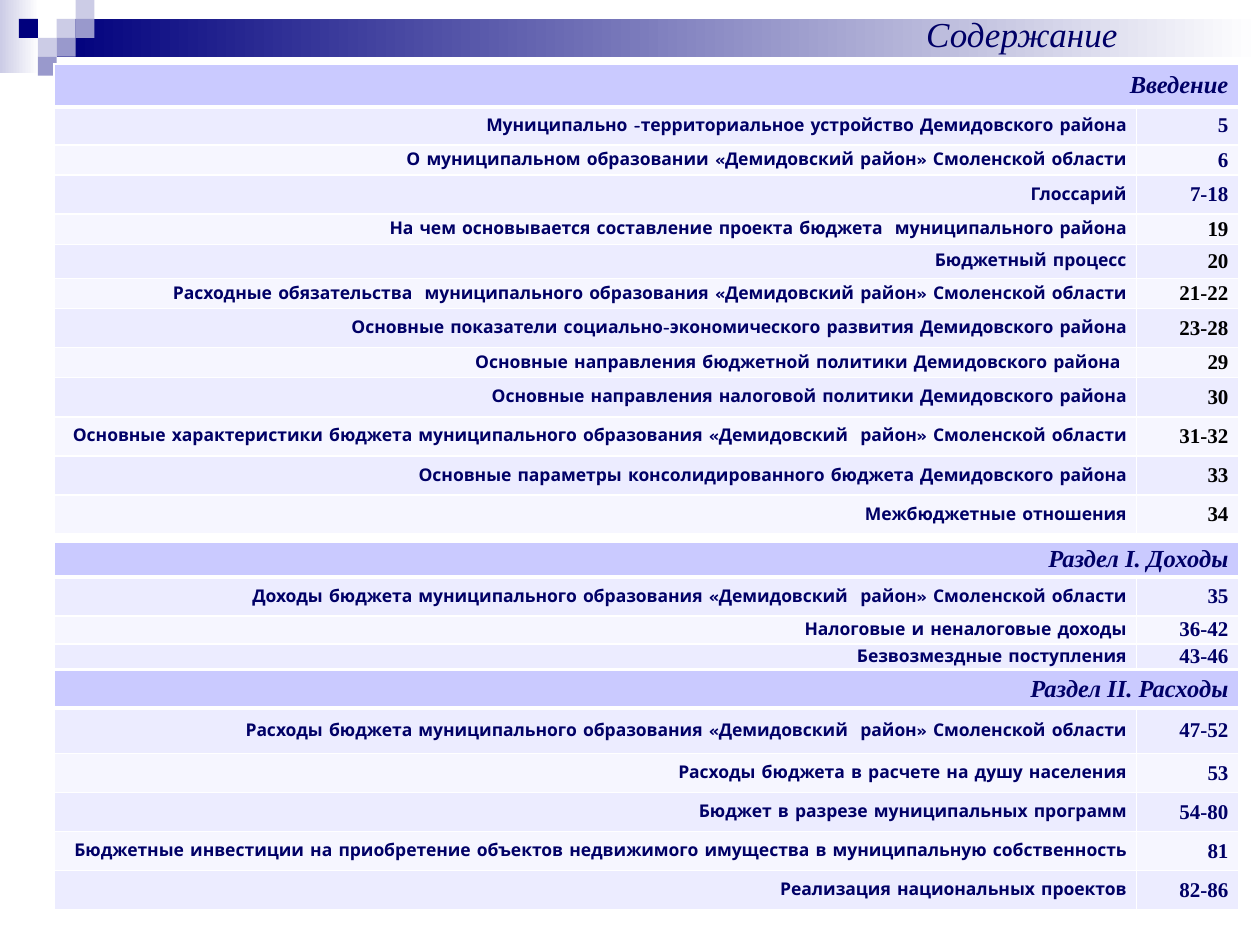
from dataclasses import dataclass

from lxml import etree
from pptx import Presentation
from pptx.dml.color import RGBColor
from pptx.enum.shapes import MSO_SHAPE
from pptx.enum.text import MSO_ANCHOR, PP_ALIGN
from pptx.oxml.ns import qn
from pptx.util import Pt

RECTANGLE = MSO_SHAPE.RECTANGLE
MIDDLE = MSO_ANCHOR.MIDDLE
CENTER, RIGHT = PP_ALIGN.CENTER, PP_ALIGN.RIGHT
PX = 9144  # 100 px to the inch


@dataclass(frozen=True)
class Theme:
    white: str = "FFFFFF"
    black: str = "000000"
    ink: str = "000066"
    dark: str = "00007D"
    medium: str = "9999CC"
    light: str = "CCCCE6"
    heading_fill: str = "CACAFF"
    bands: tuple = ("ECECFF", "F6F6FF")
    serif: str = "Times New Roman"
    rounded: str = "Comic Neue"
    title_size: int = 20
    heading_size: int = 14
    page_size: int = 12
    topic_size: int = 10


THEME = Theme()

# Each row: topic, pages, height in px
INTRODUCTION = [
    ("Муниципально -территориальное устройство Демидовского района", "5", 30),
    ("О муниципальном образовании «Демидовский район» Смоленской области", "6", 24),
    ("Глоссарий", "7-18", 31),
    ("На чем основывается составление проекта бюджета  муниципального района", "19", 24),
    ("Бюджетный процесс", "20", 27),
    ("Расходные обязательства  муниципального образования «Демидовский район» Смоленской области", "21-22", 24),
    ("Основные показатели социально-экономического развития Демидовского района", "23-28", 31),
    ("Основные направления бюджетной политики Демидовского района ", "29", 24),
    ("Основные направления налоговой политики Демидовского района", "30", 31),
    ("Основные характеристики бюджета муниципального образования «Демидовский  район» Смоленской области", "31-32", 31),
    ("Основные параметры консолидированного бюджета Демидовского района", "33", 31),
    ("Межбюджетные отношения", "34", 31),
]
INCOME = [
    ("Доходы бюджета муниципального образования «Демидовский  район» Смоленской области", "35", 31),
    ("Налоговые и неналоговые доходы", "36-42", 22),
    ("Безвозмездные поступления", "43-46", 19),
]
EXPENSES = [
    ("Расходы бюджета муниципального образования «Демидовский  район» Смоленской области", "47-52", 36),
    ("Расходы бюджета в расчете на душу населения", "53", 31),
    ("Бюджет в разрезе муниципальных программ", "54-80", 31),
    ("Бюджетные инвестиции на приобретение объектов недвижимого имущества в муниципальную собственность", "81", 31),
    ("Реализация национальных проектов", "82-86", 31),
]


def box_emu(*lengths):
    return [length * PX for length in lengths]


def style_paragraph(paragraph, alignment, font_name, size, color, bold=False, italic=False):
    paragraph.alignment = alignment
    font = paragraph.font
    font.name, font.size = font_name, Pt(size)
    font.bold, font.italic = bold, italic
    font.color.rgb = RGBColor.from_string(color)


def add_rectangle(slide, box, *colors):
    """One colour gives a solid fill, two a gradient from left to right."""
    shape = slide.shapes.add_shape(RECTANGLE, *box_emu(*box))
    shape.shadow.inherit = False
    shape.line.fill.background()
    if len(colors) == 1:
        shape.fill.solid()
        shape.fill.fore_color.rgb = RGBColor.from_string(colors[0])
        return
    shape.fill.gradient()
    shape.fill.gradient_angle = 0
    for position, (stop, color) in enumerate(zip(shape.fill.gradient_stops, colors)):
        stop.position = position
        stop.color.rgb = RGBColor.from_string(color)


def add_banner(slide, left, top, width):
    square = 15
    add_rectangle(slide, (left, top, 31, 58), THEME.light, THEME.white)
    add_rectangle(slide, (left + 45, top + square, width - 45, 30), THEME.dark, THEME.white)
    mosaic = [
        (1, 1, THEME.light), (2, 0, THEME.light), (2, 1, THEME.medium),
        (0, 2, THEME.light), (-1, 1, THEME.dark), (1, 2, THEME.medium),
        (0, 3, THEME.medium),
    ]
    for column, row, color in mosaic:
        box = (left + 30 + column * square, top + row * square, square, square)
        add_rectangle(slide, box, color)


def add_title(slide, left, top, width, height):
    frame = slide.shapes.add_textbox(*box_emu(left, top, width, height)).text_frame
    frame.word_wrap = True
    frame.text = "Содержание"
    style_paragraph(frame.paragraphs[0], CENTER, THEME.serif, THEME.title_size,
                    THEME.ink, italic=True)


def set_borders(cell, top=1, bottom=1):
    properties = cell._tc.get_or_add_tcPr()
    for side, points in (("L", 1), ("R", 1), ("T", top), ("B", bottom)):
        line = etree.SubElement(properties, qn(f"a:ln{side}"), w=str(Pt(points)))
        fill = etree.SubElement(line, qn("a:solidFill"))
        etree.SubElement(fill, qn("a:srgbClr"), val=THEME.white)


def fill_cell(cell, text, fill, font_name, size, color, italic=False):
    cell.margin_left = cell.margin_right = 8 * PX
    cell.margin_top = cell.margin_bottom = 0
    cell.vertical_anchor = MIDDLE
    cell.fill.solid()
    cell.fill.fore_color.rgb = RGBColor.from_string(fill)
    cell.text = text
    style_paragraph(cell.text_frame.paragraphs[0], RIGHT, font_name, size, color,
                    bold=True, italic=italic)


def add_section(slide, left, top, width, heading, heading_height, rows, black_from=None):
    """Pages are black from row number black_from on, if it is given."""
    page_width = 81
    heights = [heading_height] + [height for _, _, height in rows]
    frame = slide.shapes.add_table(len(heights), 2, *box_emu(left, top, width, sum(heights)))
    table = frame.table
    table.horz_banding = False
    table.columns[0].width = (width - page_width) * PX
    table.columns[1].width = page_width * PX
    for table_row, height in zip(table.rows, heights):
        table_row.height = height * PX

    for column, text in enumerate((heading, "")):
        cell = table.cell(0, column)
        set_borders(cell, bottom=3)
        fill_cell(cell, text, THEME.heading_fill, THEME.serif, THEME.heading_size,
                  THEME.ink, italic=True)
    table.cell(0, 0).merge(table.cell(0, 1))

    for number, (topic, pages, _) in enumerate(rows):
        band = THEME.bands[number % 2]
        is_black = black_from is not None and number >= black_from
        page_color = THEME.black if is_black else THEME.ink
        topic_cell, page_cell = table.rows[number + 1].cells
        for cell in (topic_cell, page_cell):
            set_borders(cell, top=1 if number else 3)
        fill_cell(topic_cell, topic, band, THEME.rounded, THEME.topic_size, THEME.ink)
        fill_cell(page_cell, pages, band, THEME.serif, THEME.page_size, page_color)


def main():
    presentation = Presentation()
    presentation.slide_width, presentation.slide_height = box_emu(1000, 750)
    slide = presentation.slides.add_slide(presentation.slide_layouts[6])
    add_banner(slide, 0, 0, 1000)
    add_title(slide, 626, 5, 370, 44)
    add_section(slide, 43, 51, 940, "Введение", 34, INTRODUCTION, black_from=3)
    add_section(slide, 43, 430, 940, "Раздел I. Доходы", 28, INCOME)
    add_section(slide, 43, 532, 940, "Раздел II. Расходы", 30, EXPENSES)
    presentation.save("out.pptx")


if __name__ == "__main__":
    main()
